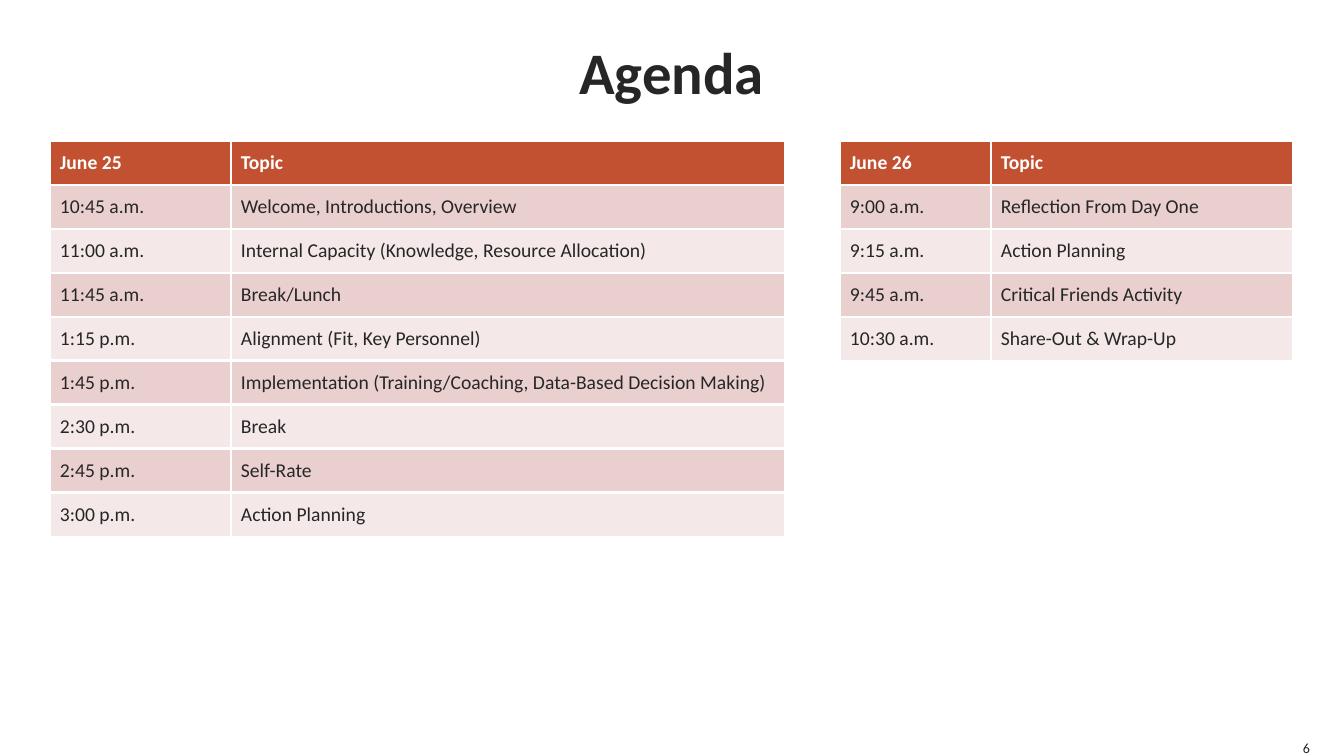
from lxml import etree
from pptx import Presentation
from pptx import util as u
from pptx.dml.color import RGBColor
from pptx.enum import text
from pptx.oxml.ns import qn

COLORS = {"ink": "262626", "header": "C25131", "odd": "E9D0CE",
          "even": "F4E9E8", "white": "FFFFFF"}
INSET = 10
ROW_HEIGHT = 44
MARGINS = ("margin_left", "margin_top", "margin_right", "margin_bottom")


def px(n):
    return u.Emu(round(n * 914400 / 100.8))


def write(tf, words, size, color="ink", bold=False, align=None):
    p = tf.paragraphs[0]
    p.alignment = align
    r = p.add_run()
    r.text = words
    for key, value in {"name": "Calibri", "size": u.Pt(size), "bold": bold}.items():
        setattr(r.font, key, value)
    r.font.color.rgb = RGBColor.from_string(COLORS[color])


prs = Presentation()
prs.slide_width, prs.slide_height = px(1344), px(756)
s = prs.slides.add_slide(prs.slide_layouts[5])

title = s.shapes.title
title.left, title.top, title.width, title.height = map(px, (50, 0, 1243, 141))
number = s.shapes.add_textbox(*map(px, (1293, 739, 17, 17)))
labels = [
    (title, "Agenda", 42, True, text.PP_ALIGN.CENTER, text.MSO_ANCHOR.MIDDLE),
    (number, "6", 10, False, text.PP_ALIGN.RIGHT, text.MSO_ANCHOR.BOTTOM),
]
for sp, words, size, bold, align, anchor in labels:
    tf = sp.text_frame
    frame = {"word_wrap": True, "auto_size": text.MSO_AUTO_SIZE.NONE,
             "vertical_anchor": anchor, **dict.fromkeys(MARGINS, 0)}
    for key, value in frame.items():
        setattr(tf, key, value)
    write(tf, words, size, bold=bold, align=align)

agendas = [
    (50, (181, 554), [
        ("June 25", "Topic"),
        ("10:45 a.m.", "Welcome, Introductions, Overview"),
        ("11:00 a.m.", "Internal Capacity (Knowledge, Resource Allocation)"),
        ("11:45 a.m.", "Break/Lunch"),
        ("1:15 p.m.", "Alignment (Fit, Key Personnel)"),
        ("1:45 p.m.", "Implementation (Training/Coaching, Data-Based Decision Making)"),
        ("2:30 p.m.", "Break"),
        ("2:45 p.m.", "Self-Rate"),
        ("3:00 p.m.", "Action Planning"),
    ]),
    (840, (151, 302), [
        ("June 26", "Topic"),
        ("9:00 a.m.", "Reflection From Day One"),
        ("9:15 a.m.", "Action Planning"),
        ("9:45 a.m.", "Critical Friends Activity"),
        ("10:30 a.m.", "Share-Out & Wrap-Up"),
    ]),
]
for left, widths, rows in agendas:
    last = len(rows) - 1
    table = s.shapes.add_table(len(rows), 2, px(left), px(141), px(sum(widths)),
                               px(ROW_HEIGHT * len(rows))).table
    for column, width in zip(table.columns, widths):
        column.width = px(width)
    for i, row in enumerate(rows):
        table.rows[i].height = px(ROW_HEIGHT)
        header = i == 0
        fill = "header" if header else "odd" if i % 2 else "even"
        for j, words in enumerate(row):
            cell = table.cell(i, j)
            for key in MARGINS:
                setattr(cell, key, px(INSET))
            write(cell.text_frame, words, 14, "white" if header else "ink", header)
            tcPr = cell._tc.get_or_add_tcPr()
            outer = {"lnL": j == 0, "lnR": j == 1, "lnT": header, "lnB": i == last}
            for edge, is_outer in outer.items():
                ln = etree.SubElement(tcPr, qn(f"a:{edge}"),
                                      w=str(u.Pt(1 if is_outer else 2.25)))
                solid = etree.SubElement(ln, qn("a:solidFill"))
                etree.SubElement(solid, qn("a:srgbClr"), val=COLORS["white"])
            cell.fill.solid()
            cell.fill.fore_color.rgb = RGBColor.from_string(COLORS[fill])

prs.save("out.pptx")
